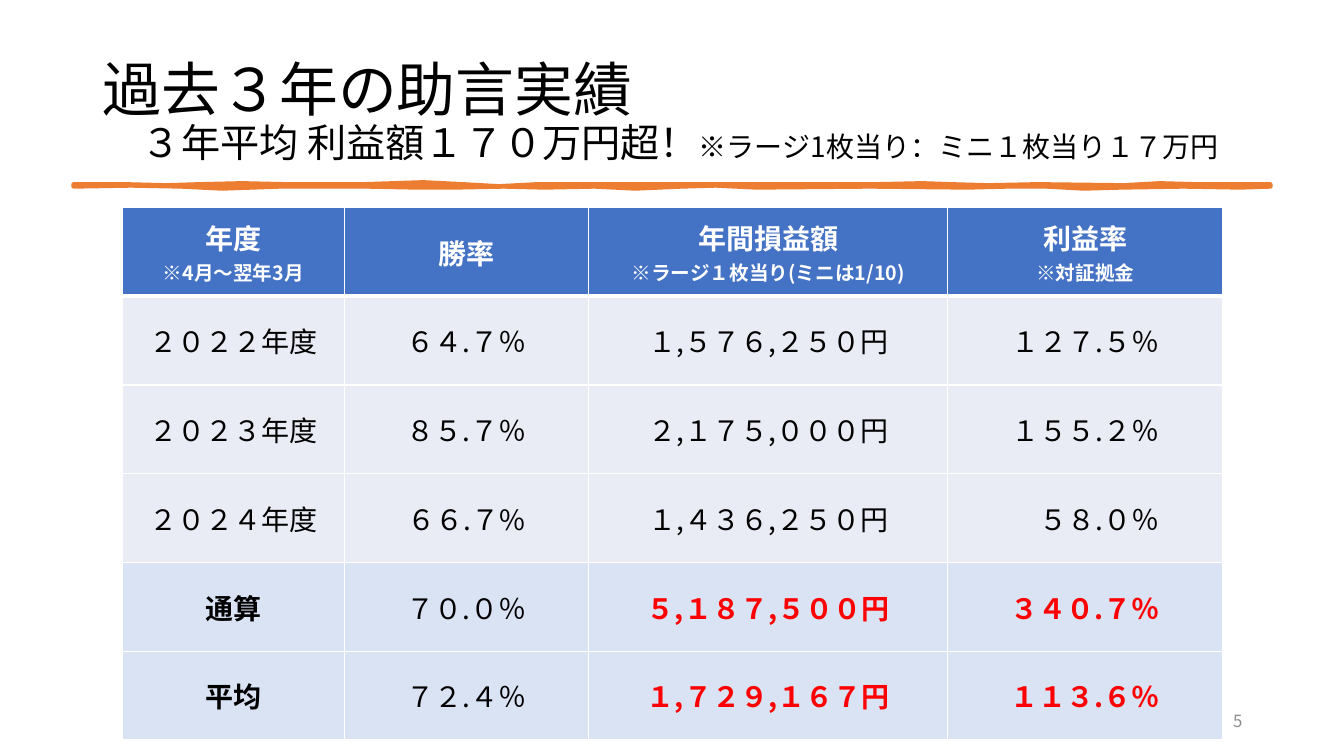
"""Build the slide on three years of advisory results."""
from lxml import etree
from pptx import Presentation
from pptx.dml.color import RGBColor
from pptx.enum.text import MSO_ANCHOR, MSO_AUTO_SIZE, PP_ALIGN
from pptx.oxml.ns import qn
from pptx.util import Inches, Pt

FONT = "Noto Sans CJK JP"
HUES = {
    "black": "000000", "white": "FFFFFF", "red": "FF0000", "gray": "8C8C8C",
    "orange": "ED7D31", "head": "4472C4", "year": "E9EBF5", "total": "DAE3F3",
}


def add_run(para, text, size, hue="black", bold=False):
    run = para.add_run()
    run.text = text
    font = run.font
    font.name, font.size, font.bold = FONT, Pt(size), bold
    font.color.rgb = RGBColor.from_string(HUES[hue])
    latin = run._r.rPr.find(qn("a:latin"))
    east = etree.Element(qn("a:ea"), typeface=FONT)
    latin.addnext(east)


def add_edge(cell, side, width):
    line = etree.SubElement(cell._tc.get_or_add_tcPr(), qn("a:ln" + side), w=str(Pt(width)))
    fill = etree.SubElement(line, qn("a:solidFill"))
    etree.SubElement(fill, qn("a:srgbClr"), val=HUES["white"])


deck = Presentation()
deck.slide_width, deck.slide_height = Inches(13.33), Inches(7.5)
slide = deck.slides.add_slide(deck.slide_layouts[5])

title = slide.shapes.title
title.left, title.top = Inches(0.92), Inches(0.4)
title.width, title.height = Inches(12.19), Inches(1.45)
frame = title.text_frame
frame.word_wrap, frame.auto_size = True, MSO_AUTO_SIZE.NONE
frame.vertical_anchor = MSO_ANCHOR.MIDDLE
para = frame.paragraphs[0]
para.alignment, para.line_spacing = PP_ALIGN.LEFT, 0.9
add_run(para, "過去３年の助言実績", 42)
para.add_line_break()
add_run(para, "　３年平均 利益額１７０万円超！", 28)
add_run(para, "※ラージ1枚当り：ミニ１枚当り１７万円", 20)

upper = [
    (0.73, 1.83), (1.24, 1.83), (1.65, 1.84), (1.98, 1.83), (2.4, 1.82),
    (2.84, 1.83), (3.61, 1.83), (4.2, 1.81), (4.59, 1.83), (4.95, 1.85),
    (5.33, 1.83), (5.6, 1.83), (6.46, 1.83), (7.0, 1.83), (7.44, 1.83),
    (8.06, 1.83), (8.68, 1.83), (9.15, 1.82), (9.43, 1.83), (9.8, 1.84),
    (10.29, 1.83), (11.15, 1.84), (11.5, 1.82), (11.86, 1.83), (12.6, 1.83),
]
lower = [
    (12.6, 1.85), (12.3, 1.86), (11.74, 1.85), (11.12, 1.86), (10.75, 1.87),
    (10.38, 1.85), (9.99, 1.85), (9.6, 1.86), (8.63, 1.85), (7.5, 1.86),
    (7.1, 1.84), (6.76, 1.85), (6.3, 1.87), (5.9, 1.85), (5.4, 1.86),
    (5.0, 1.85), (4.5, 1.86), (4.14, 1.86), (3.64, 1.85), (2.78, 1.85),
    (2.2, 1.87), (1.8, 1.85), (1.3, 1.84), (0.73, 1.85),
]
spots = [(Inches(x), Inches(y)) for x, y in upper + lower]
build = slide.shapes.build_freeform(*spots[0])
build.add_line_segments(spots[1:], close=True)
rule = build.convert_to_shape()
rule.shadow.inherit = False
rule.fill.solid()
rule.fill.fore_color.rgb = RGBColor.from_string(HUES["orange"])
rule.line.color.rgb = RGBColor.from_string(HUES["orange"])
rule.line.width = Pt(3.25)

rows = [
    [("年度", "※4月～翌年3月"), ("勝率",),
     ("年間損益額", "※ラージ１枚当り(ミニは1/10)"), ("利益率", "※対証拠金")],
    [("２０２２年度",), ("６４.７％",), ("１,５７６,２５０円",), ("１２７.５％",)],
    [("２０２３年度",), ("８５.７％",), ("２,１７５,０００円",), ("１５５.２％",)],
    [("２０２４年度",), ("６６.７%",), ("１,４３６,２５０円",), ("　５８.０％",)],
    [("通算",), ("７０.０％",), ("５,１８７,５００円",), ("３４０.７％",)],
    [("平均",), ("７２.４％",), ("１,７２９,１６７円",), ("１１３.６％",)],
]
bands = ["head", "year", "year", "year", "total", "total"]
table = slide.shapes.add_table(
    len(rows), 4, Inches(1.21), Inches(2.06), Inches(10.92), Inches(5.29)).table
for col, width in zip(table.columns, [2.21, 2.42, 3.56, 2.73]):
    col.width = Inches(width)
for r, (row, band) in enumerate(zip(rows, bands)):
    table.rows[r].height = Inches(0.88)
    for c, lines in enumerate(row):
        cell = table.cell(r, c)
        cell.vertical_anchor = MSO_ANCHOR.MIDDLE
        for side in "LRTB":
            thick = (r, side) in [(0, "B"), (1, "T")]
            add_edge(cell, side, 3 if thick else 1)
        cell.fill.solid()
        cell.fill.fore_color.rgb = RGBColor.from_string(HUES[band])
        hue = "white" if band == "head" else "red" if band == "total" and c > 1 else "black"
        bold = band == "head" or band == "total" and c != 1
        for n, text in enumerate(lines):
            para = cell.text_frame.add_paragraph() if n else cell.text_frame.paragraphs[0]
            para.alignment = PP_ALIGN.CENTER
            add_run(para, text, 14 if n else 20, hue, bold)

page = slide.shapes.add_textbox(Inches(9.42), Inches(6.95), Inches(3), Inches(0.4))
frame = page.text_frame
frame.word_wrap, frame.vertical_anchor = True, MSO_ANCHOR.MIDDLE
frame.paragraphs[0].alignment = PP_ALIGN.RIGHT
add_run(frame.paragraphs[0], "5", 12, "gray")

deck.save("out.pptx")
